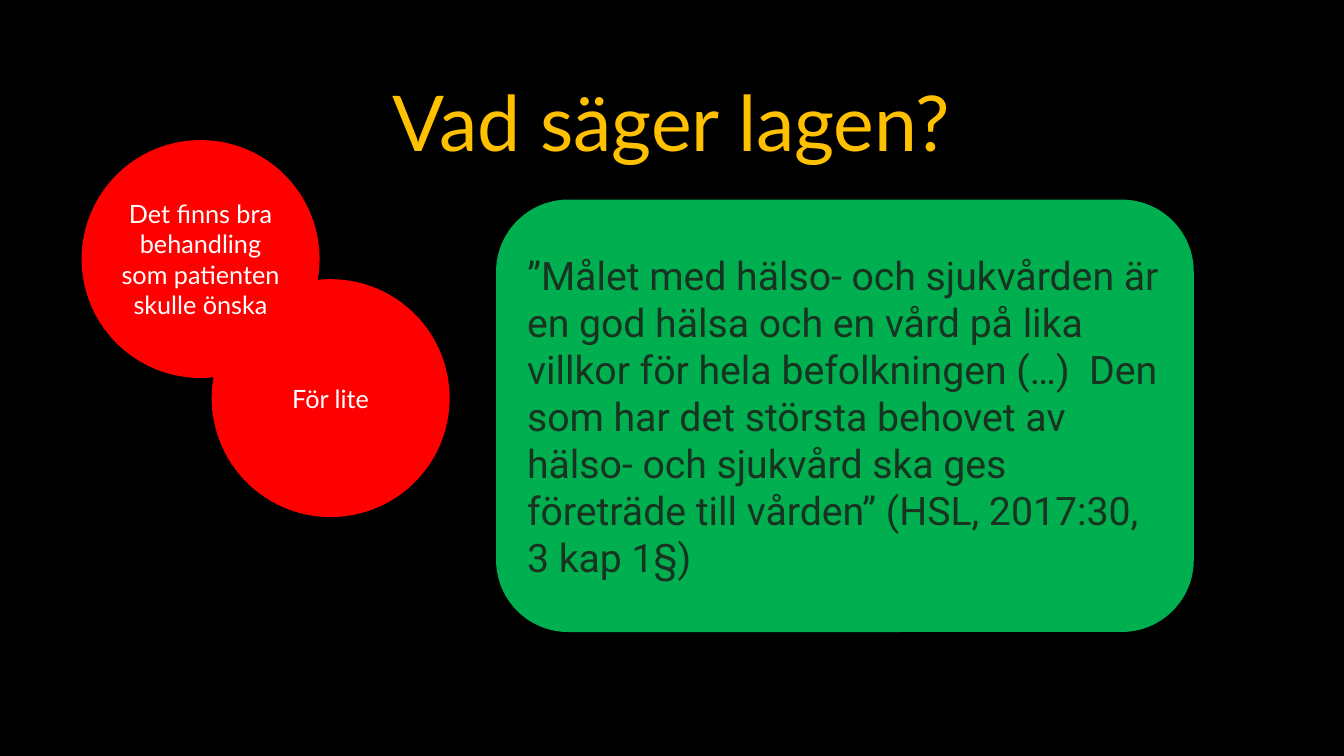
from dataclasses import dataclass

from pptx import Presentation
from pptx import util as u
from pptx.dml.color import RGBColor
from pptx.enum import shapes, text

KIND = shapes.MSO_SHAPE
ALIGN = text.PP_ALIGN


@dataclass
class Style:
    font: str
    size: float
    color: str
    align: ALIGN = ALIGN.CENTER


@dataclass
class Panel:
    kind: KIND
    box: tuple[float, float, float, float]
    fill: str
    words: str
    style: Style
    inset: float = 0.1


LABEL = Style("Lato", 18, "FFFFFF")
QUOTE = Style("Roboto", 28, "18331F", ALIGN.LEFT)
TITLE = Style("Lato", 55, "FFC000")
SIDE = 2.36

PANELS = [
    Panel(KIND.OVAL, (2.1, 2.77, SIDE, SIDE), "FF0000", "För lite", LABEL),
    Panel(KIND.OVAL, (0.81, 1.39, SIDE, SIDE), "FF0000",
          "Det finns bra behandling som patienten skulle önska", LABEL, 0),
    Panel(KIND.ROUNDED_RECTANGLE, (4.92, 1.98, 6.92, 4.29), "00B050",
          "”Målet med hälso- och sjukvården är en god hälsa och en vård på lika "
          "villkor för hela befolkningen (…)  Den som har det största behovet av "
          "hälso- och sjukvård ska ges företräde till vården” "
          "(HSL, 2017:30, 3 kap 1§)", QUOTE),
]


def paint(fill, color: str) -> None:
    fill.solid()
    fill.fore_color.rgb = RGBColor.from_string(color)


def write(shape, words: str, style: Style) -> None:
    frame = shape.text_frame
    frame.text = words
    frame.word_wrap = True
    frame.auto_size = text.MSO_AUTO_SIZE.NONE
    frame.vertical_anchor = text.MSO_ANCHOR.MIDDLE
    para = frame.paragraphs[0]
    para.alignment = style.align
    font = para.runs[0].font
    font.name = style.font
    font.size = u.Pt(style.size)
    paint(font.fill, style.color)


def draw(slide, panel: Panel) -> None:
    shape = slide.shapes.add_shape(panel.kind, *map(u.Inches, panel.box))
    shape.shadow.inherit = False
    paint(shape.fill, panel.fill)
    shape.line.fill.background()
    write(shape, panel.words, panel.style)
    frame = shape.text_frame
    frame.margin_left = frame.margin_right = u.Inches(panel.inset)


def main() -> None:
    deck = Presentation()
    deck.slide_width, deck.slide_height = u.Inches(13.33), u.Inches(7.5)
    slide = deck.slides.add_slide(deck.slide_layouts.get_by_name("Title Only"))
    paint(slide.background.fill, "000000")

    title = slide.shapes.title
    title.left, title.top = u.Inches(1), u.Inches(0.67)
    title.width, title.height = u.Inches(11.32), u.Inches(1.06)
    write(title, "Vad säger lagen?", TITLE)

    for panel in PANELS:
        draw(slide, panel)
    deck.save("out.pptx")


if __name__ == "__main__":
    main()
